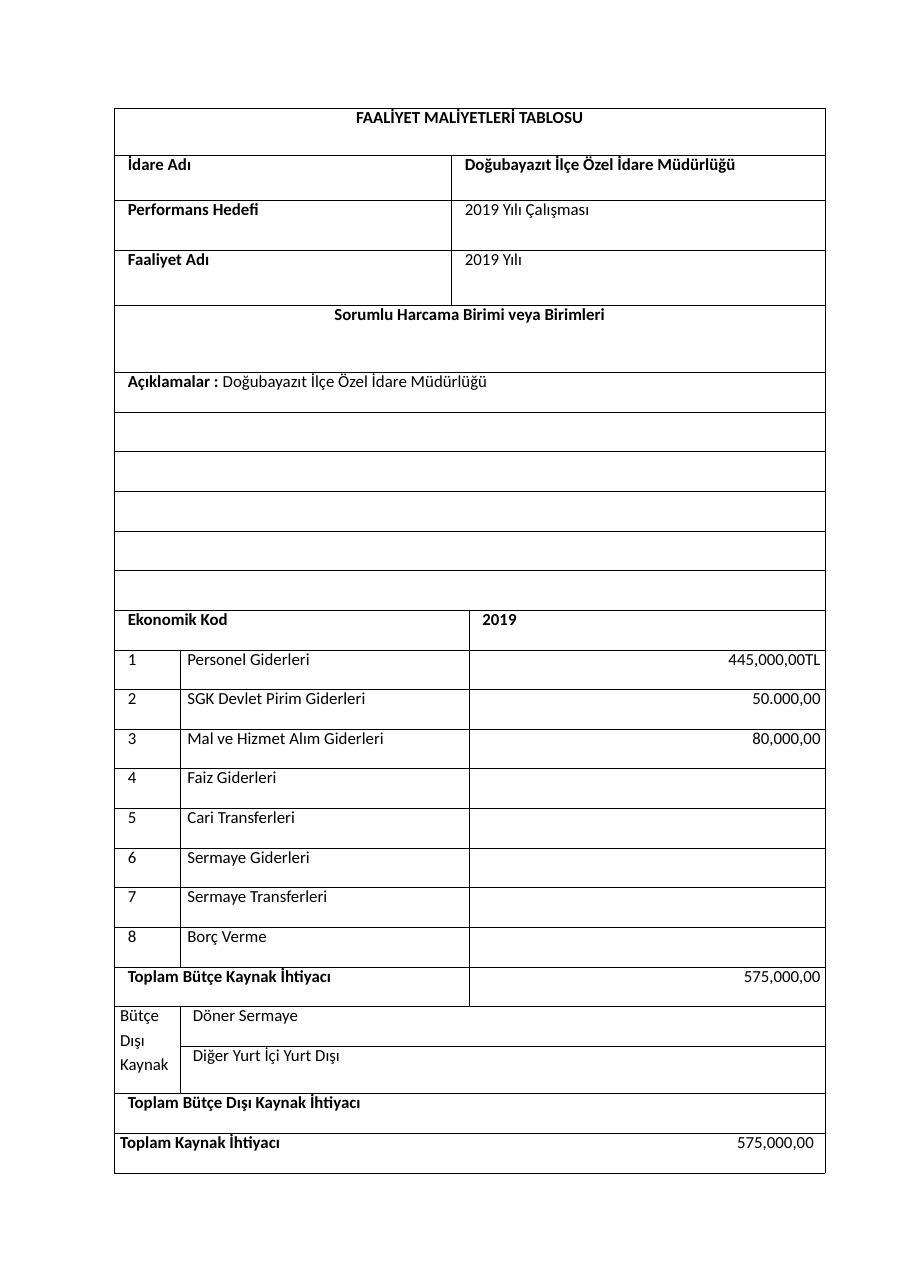
import dataclasses

import lxml.etree
import pptx
import pptx.dml.color
import pptx.enum.text
import pptx.oxml.ns
import pptx.util

Inches, Pt = pptx.util.Inches, pptx.util.Pt
ALIGN = pptx.enum.text.PP_ALIGN

# Grid of the form, in inches
LEFT, TOP = 1.04, 0.98
COLS = [0.6, 2.46, 0.06, 3.23]
ROW = 0.36
HEADER_ROWS = [0.43, 0.41, 0.45, 0.5, 0.61]
ROWS = HEADER_ROWS + [ROW] * 17 + [0.43] + [ROW] * 2
INDENT, VALUE_GAP, TAB = 0.12, 0.04, 5.6
INK = "000000"
FONT = {"name": "Calibri", "size": Pt(11)}
LINE = Pt(12.9)


@dataclasses.dataclass
class Entry:
    """A cell of the form: bold lead, then regular text."""
    col: int
    cols: int
    lead: str = ""
    text: str = ""
    rows: int = 1
    indent: float = INDENT
    align: ALIGN = ALIGN.LEFT


def rgb(color: str) -> pptx.dml.color.RGBColor:
    return pptx.dml.color.RGBColor.from_string(color)


def heading(lead: str) -> list[Entry]:
    return [Entry(0, 4, lead, indent=0, align=ALIGN.CENTER)]


def pair(label: str, lead: str = "", text: str = "") -> list[Entry]:
    return [Entry(0, 2, label), Entry(2, 2, lead, text)]


def amount(text: str) -> Entry:
    return Entry(3, 1, text=text, indent=0, align=ALIGN.RIGHT)


def expense(code: int, name: str, value: str) -> list[Entry]:
    return [Entry(0, 1, text=str(code)), Entry(1, 2, text=name, indent=0.06), amount(value)]


def add_borders(cell) -> None:
    tc_pr = cell._tc.get_or_add_tcPr()
    qn = pptx.oxml.ns.qn
    for side in ("lnL", "lnR", "lnT", "lnB"):
        ln = lxml.etree.SubElement(tc_pr, qn(f"a:{side}"), w=str(Pt(0.5)))
        fill = lxml.etree.SubElement(ln, qn("a:solidFill"))
        lxml.etree.SubElement(fill, qn("a:srgbClr"), val=INK)


def add_tab(p) -> None:
    qn = pptx.oxml.ns.qn
    tabs = lxml.etree.SubElement(p._p.get_or_add_pPr(), qn("a:tabLst"))
    lxml.etree.SubElement(tabs, qn("a:tab"), pos=str(Inches(TAB)), algn="l")


def add_run(p, text: str, bold: bool) -> None:
    r = p.add_run()
    r.text = text
    for key, value in {**FONT, "bold": bold}.items():
        setattr(r.font, key, value)
    r.font.color.rgb = rgb(INK)


def fill_entry(table, row: int, entry: Entry) -> None:
    cell = table.cell(row, entry.col)
    if entry.cols * entry.rows > 1:
        cell.merge(table.cell(row + entry.rows - 1, entry.col + entry.cols - 1))
    cell.margin_left = Inches(entry.indent)
    if entry.align == ALIGN.RIGHT:
        cell.margin_right = Inches(VALUE_GAP)
    tf = cell.text_frame
    for i, text in enumerate(entry.text.split("\n")):
        p = tf.add_paragraph() if i else tf.paragraphs[0]
        p.alignment = entry.align
        p.line_spacing = 1.17 if i else LINE
        if "\t" in entry.lead:
            add_tab(p)
        if entry.lead and not i:
            add_run(p, entry.lead, True)
        if text:
            add_run(p, text, False)


EXPENSES = [
    ("Personel Giderleri", "445,000,00TL"),
    ("SGK Devlet Pirim Giderleri", "50.000,00"),
    ("Mal ve Hizmet Alım Giderleri", "80,000,00"),
    ("Faiz Giderleri", ""),
    ("Cari Transferleri", ""),
    ("Sermaye Giderleri", ""),
    ("Sermaye Transferleri", ""),
    ("Borç Verme", ""),
]

FORM = [
    # Heading and activity details
    heading("FAALİYET MALİYETLERİ TABLOSU"),
    pair("İdare Adı", lead="Doğubayazıt İlçe Özel İdare Müdürlüğü"),
    pair("Performans Hedefi", text="2019 Yılı Çalışması"),
    pair("Faaliyet Adı", text="2019 Yılı"),
    heading("Sorumlu Harcama Birimi veya Birimleri"),
    [Entry(0, 4, "Açıklamalar : ", "Doğubayazıt İlçe Özel İdare Müdürlüğü")],
    *[[Entry(0, 4)] for _ in range(5)],
    # Expenses by economic code
    [Entry(0, 3, "Ekonomik Kod"), Entry(3, 1, "2019")],
    *[expense(code, *item) for code, item in enumerate(EXPENSES, 1)],
    [Entry(0, 3, "Toplam Bütçe Kaynak İhtiyacı"), amount("575,000,00")],
    # Off-budget sources and totals
    [Entry(0, 1, text="Bütçe\nDışı Kaynak", rows=2, indent=0.05),
     Entry(1, 3, text="Döner Sermaye", indent=0.11)],
    [Entry(1, 3, text="Diğer Yurt İçi Yurt Dışı", indent=0.11)],
    [Entry(0, 4, "Toplam Bütçe Dışı Kaynak İhtiyacı")],
    [Entry(0, 4, "Toplam Kaynak İhtiyacı\t", "575,000,00", indent=0.05)],
]


def main() -> None:
    prs = pptx.Presentation()
    prs.slide_width, prs.slide_height = Inches(8.26), Inches(11.69)
    s = prs.slides.add_slide(prs.slide_layouts[6])

    # Plain table on the grid
    frame = s.shapes.add_table(len(ROWS), len(COLS), Inches(LEFT), Inches(TOP),
                               Inches(sum(COLS)), Inches(sum(ROWS)))
    table = frame.table
    table.first_row = table.horz_banding = False
    for column, width in zip(table.columns, COLS):
        column.width = Inches(width)
    for row, height in zip(table.rows, ROWS):
        row.height = Inches(height)
    for cell in table.iter_cells():
        for side in ("left", "right", "top", "bottom"):
            setattr(cell, f"margin_{side}", 0)

    # Entries, then rules around every visible cell
    for row, entries in enumerate(FORM):
        for entry in entries:
            fill_entry(table, row, entry)
    for cell in table.iter_cells():
        if not cell.is_spanned:
            add_borders(cell)
        cell.fill.background()

    prs.save("out.pptx")


if __name__ == "__main__":
    main()
